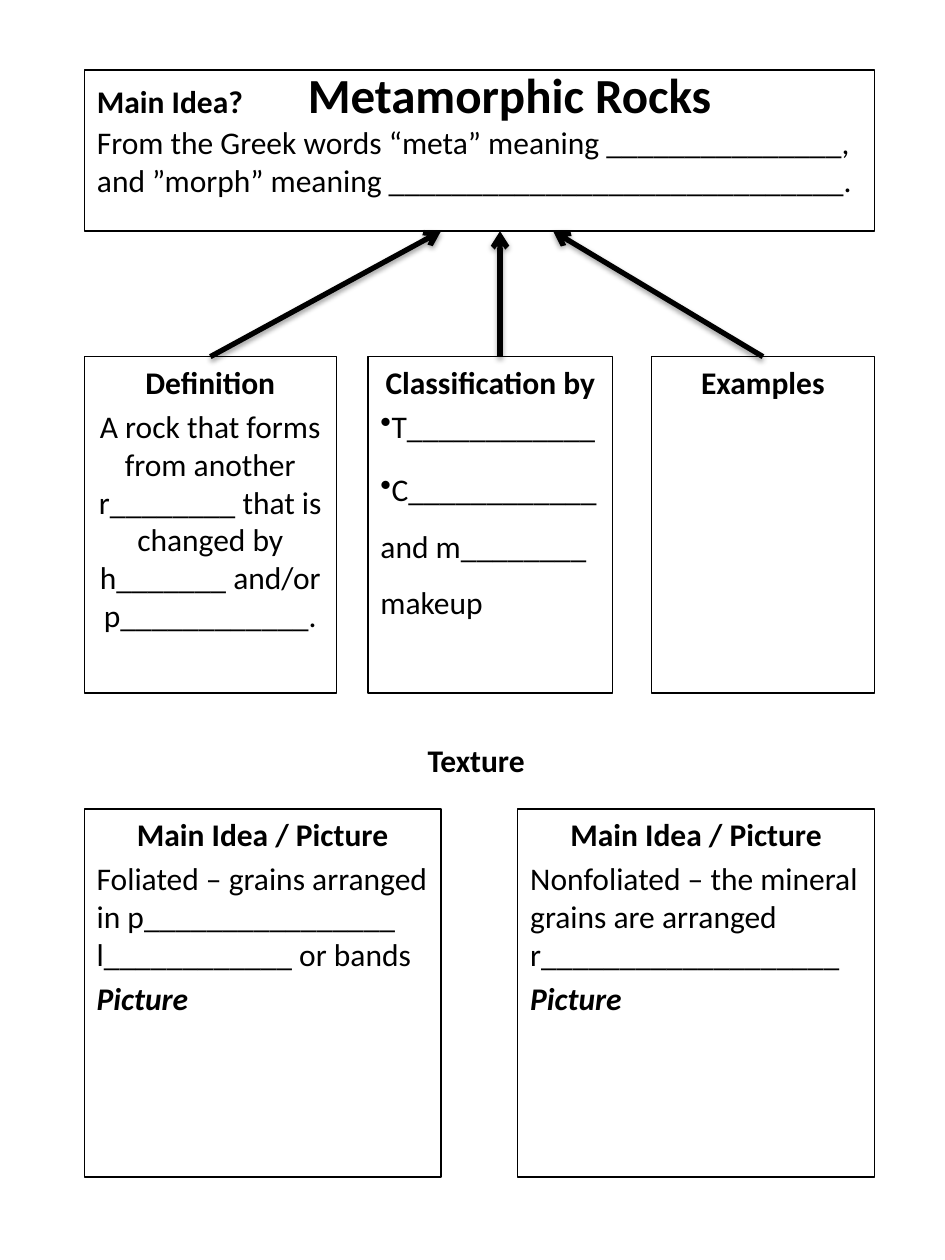
from lxml.etree import SubElement
from pptx import Presentation
from pptx.dml.color import RGBColor
from pptx.enum.shapes import MSO_CONNECTOR, MSO_SHAPE
from pptx.enum.text import MSO_ANCHOR, MSO_AUTO_SIZE, PP_ALIGN
from pptx.oxml.ns import qn
from pptx.util import Cm, Pt

INK = "000000"
LEFT, RIGHT = 1.7, 17.63
TITLE_TOP, TITLE_HEIGHT = 1.41, 3.25
IDEAS_TOP, IDEAS_HEIGHT = 7.19, 6.78
TEXTURES_TOP, TEXTURES_HEIGHT, TEXTURE_WIDTH = 16.31, 7.42, 7.19

TOPIC = ("Main Idea?\t", "Metamorphic Rocks")
ORIGIN = ("From the Greek words “meta” meaning _______________, "
          "and ”morph” meaning _____________________________.")
IDEAS = [
    (LEFT, 5.08, [
        ("heading", "Definition"),
        ("centred", "A rock that forms from another r________ that is "
                    "changed by h_______ and/or p____________."),
    ]),
    (7.42, 4.93, [
        ("heading", "Classification by"),
        ("bullet", "T____________"),
        ("spaced bullet", "C____________ and m________ makeup"),
    ]),
    (13.13, 4.5, [("heading", "Examples")]),
]
TEXTURES = [
    (LEFT, "Foliated – grains arranged in p________________ "
           "l____________ or bands"),
    (RIGHT - TEXTURE_WIDTH, "Nonfoliated – the mineral grains are arranged "
                            "r___________________"),
]
ARROWS = [(4.24, 8.89), (10.08, 10.08), (15.38, 11.15)]


def color(value):
    """Turn a hex string into a colour."""
    return RGBColor.from_string(value)


def style(font, size=18, bold=False, italic=False):
    """Apply the worksheet font."""
    font.name, font.size = "Calibri", Pt(size)
    font.bold, font.italic = bold, italic
    font.color.rgb = color(INK)


def outline(shape):
    """Give a shape a thin border and no fill."""
    shape.fill.background()
    shape.line.color.rgb = color(INK)
    shape.line.width = Pt(0.75)


def write(frame, content):
    """Write styled paragraphs into a text frame."""
    frame.word_wrap = True
    frame.vertical_anchor = MSO_ANCHOR.TOP
    for index, (kind, text) in enumerate(content):
        para = frame.add_paragraph() if index else frame.paragraphs[0]
        para.text = text
        centred = kind in ("heading", "centred")
        para.alignment = PP_ALIGN.CENTER if centred else PP_ALIGN.LEFT
        if index:
            para.space_before = Pt(3.6)
        if kind == "spaced bullet":
            para.line_spacing = 1.5
        if "bullet" in kind:
            SubElement(para._p.get_or_add_pPr(), qn("a:buChar"), char="•")
        style(para.font, bold=kind in ("heading", "picture"),
              italic=kind == "picture")


def add_panel(page, left, top, width, height, content):
    """Add a bordered box with text."""
    box = page.shapes.add_shape(MSO_SHAPE.RECTANGLE, Cm(left), Cm(top),
                                Cm(width), Cm(height))
    box.shadow.inherit = False
    outline(box)
    write(box.text_frame, content)


def add_title(page):
    """Place and fill the title box."""
    title = page.shapes.title
    title.left, title.top = Cm(LEFT), Cm(TITLE_TOP)
    title.width, title.height = Cm(RIGHT - LEFT), Cm(TITLE_HEIGHT)
    outline(title)
    frame = title.text_frame
    frame.auto_size = MSO_AUTO_SIZE.NONE
    frame.word_wrap = True
    frame.vertical_anchor = MSO_ANCHOR.MIDDLE
    frame.margin_top, frame.margin_bottom = Cm(0), Cm(0.76)
    para = frame.paragraphs[0]
    para.alignment = PP_ALIGN.LEFT
    tabs = SubElement(para._p.get_or_add_pPr(), qn("a:tabLst"))
    SubElement(tabs, qn("a:tab"), pos=str(Cm(4.25)), algn="l")
    for text, size in zip(TOPIC, (18, 28)):
        span = para.add_run()
        span.text = text
        style(span.font, size, bold=True)
    para.add_line_break()
    span = para.add_run()
    span.text = ORIGIN
    style(span.font)


def add_arrow(page, start, end):
    """Draw a shadowed arrow from the idea row up to the title box."""
    arrow = page.shapes.add_connector(
        MSO_CONNECTOR.STRAIGHT, Cm(start), Cm(IDEAS_TOP),
        Cm(end), Cm(TITLE_TOP + TITLE_HEIGHT))
    arrow.line.color.rgb = color(INK)
    arrow.line.width = Pt(3)
    SubElement(arrow.line._get_or_add_ln(), qn("a:tailEnd"), type="arrow")
    effects = SubElement(arrow._element.spPr, qn("a:effectLst"))
    shadow = SubElement(effects, qn("a:outerShdw"), blurRad=str(Pt(3.1)),
                        dist=str(Pt(1.6)), dir="5400000", rotWithShape="0")
    tint = SubElement(shadow, qn("a:srgbClr"), val=INK)
    SubElement(tint, qn("a:alpha"), val="38000")


def main():
    """Build the worksheet."""
    deck = Presentation()
    deck.slide_width, deck.slide_height = Cm(19.05), Cm(25.4)
    page = deck.slides.add_slide(deck.slide_layouts[5])
    add_title(page)
    for left, width, content in IDEAS:
        add_panel(page, left, IDEAS_TOP, width, IDEAS_HEIGHT, content)
    for left, text in TEXTURES:
        content = [("heading", "Main Idea / Picture"), ("body", text),
                   ("picture", "Picture")]
        add_panel(page, left, TEXTURES_TOP, TEXTURE_WIDTH, TEXTURES_HEIGHT,
                  content)
    for start, end in ARROWS:
        add_arrow(page, start, end)
    label = page.shapes.add_textbox(Cm(8.05), Cm(14.82), Cm(3.1), Cm(1.02))
    write(label.text_frame, [("heading", "Texture")])
    deck.save("out.pptx")


if __name__ == "__main__":
    main()
